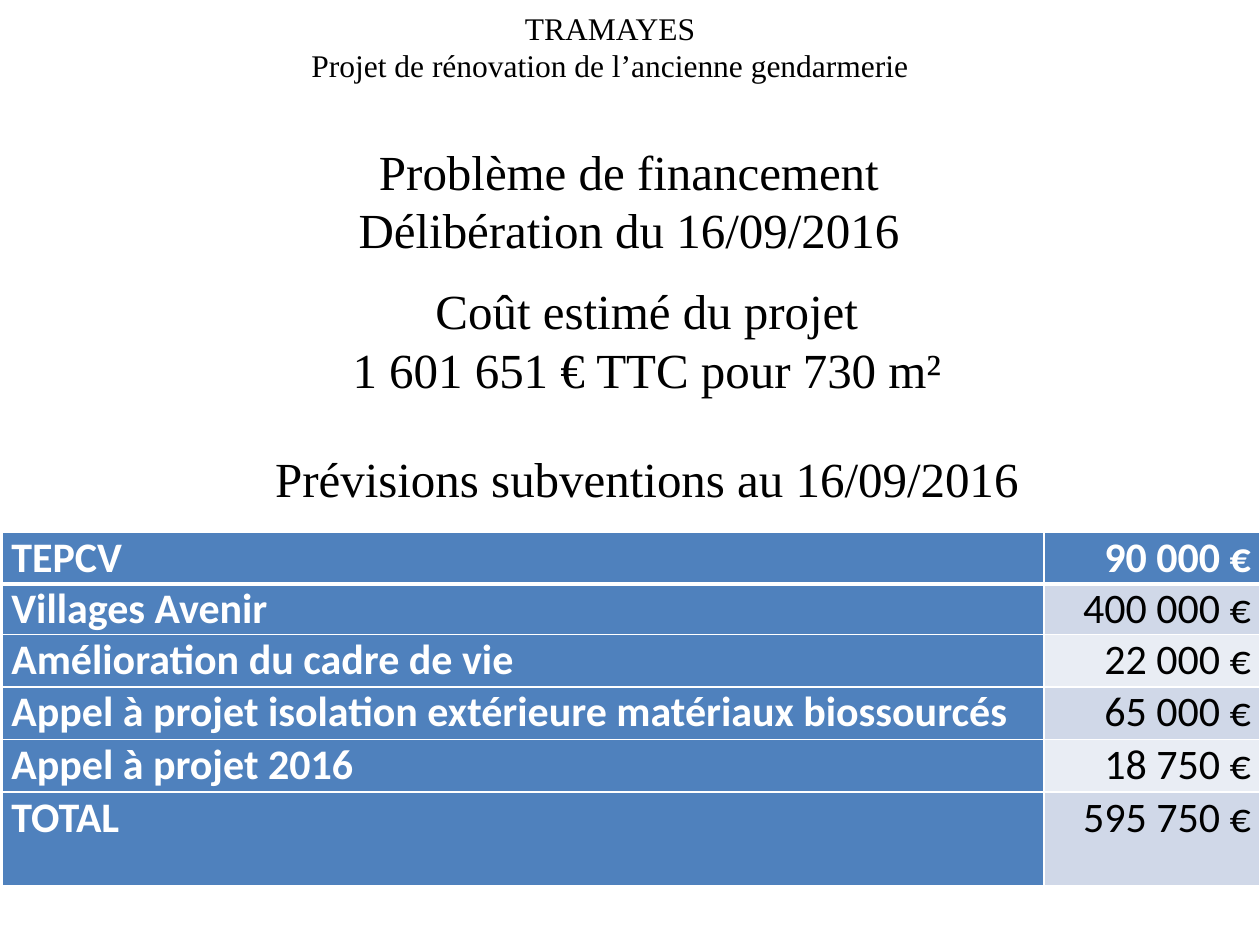
from dataclasses import dataclass

from lxml.etree import SubElement
from pptx import Presentation
from pptx.dml.color import RGBColor
from pptx.enum.text import MSO_AUTO_SIZE as AutoSize, PP_ALIGN as Align
from pptx.oxml.ns import qn
from pptx.util import Cm, Pt

BLACK = RGBColor(0x00, 0x00, 0x00)
WHITE = RGBColor(0xFF, 0xFF, 0xFF)
BLUE = RGBColor(0x4F, 0x81, 0xBD)
BANDS = (RGBColor(0xE9, 0xED, 0xF4), RGBColor(0xD0, 0xD8, 0xE8))

HEADING_WIDTH = 18.0
COLUMN_WIDTHS = (21.0, 4.35)
CELL_MARGINS = {"margin_left": Cm(0.18), "margin_right": Cm(0.18),
                "margin_top": Cm(0), "margin_bottom": Cm(0)}


@dataclass
class Heading:
    left: float
    top: float
    height: float
    size: int
    lines: tuple[str, ...]


@dataclass
class Subsidy:
    name: str
    amount: str
    height: float


HEADINGS = (
    Heading(3.3, 0.05, 1.8, 18,
            ("TRAMAYES", "Projet de rénovation de l’ancienne gendarmerie")),
    Heading(3.68, 2.72, 2.64, 28,
            ("Problème de financement", "Délibération du 16/09/2016")),
    Heading(4.04, 5.54, 2.64, 28,
            ("Coût estimé du projet", "1 601 651 € TTC pour 730 m²")),
    Heading(4.04, 8.92, 2.64, 28, ("Prévisions subventions au 16/09/2016",)),
)

SUBSIDIES = (
    Subsidy("TEPCV", "90 000 €", 1.04),
    Subsidy("Villages Avenir", "400 000 €", 1.02),
    Subsidy("Amélioration du cadre de vie", "22 000 €", 1.06),
    Subsidy("Appel à projet isolation extérieure matériaux biossourcés",
            "65 000 €", 1.06),
    Subsidy("Appel à projet 2016", "18 750 €", 1.06),
    Subsidy("TOTAL", "595 750 €", 1.88),
)


def set_all(target, values: dict) -> None:
    for name, value in values.items():
        setattr(target, name, value)


def write(para, text: str, align, color: RGBColor, font: dict) -> None:
    para.alignment = align
    span = para.add_run()
    span.text = text
    set_all(span.font, font)
    span.font.color.rgb = color


def add_heading(page, heading: Heading) -> None:
    box = page.shapes.add_textbox(Cm(heading.left), Cm(heading.top),
                                  Cm(HEADING_WIDTH), Cm(heading.height))
    frame = box.text_frame
    set_all(frame, {"word_wrap": True, "auto_size": AutoSize.SHAPE_TO_FIT_TEXT})
    font = {"name": "Times New Roman", "size": Pt(heading.size)}
    for index, line in enumerate(heading.lines):
        para = frame.add_paragraph() if index else frame.paragraphs[0]
        write(para, line, Align.CENTER, BLACK, font)


def add_border(cell, side: str, points: int) -> None:
    line = SubElement(cell._tc.get_or_add_tcPr(), qn(f"a:{side}"), w=str(Pt(points)))
    fill = SubElement(line, qn("a:solidFill"))
    SubElement(fill, qn("a:srgbClr"), val=str(WHITE))


def fill_cell(cell, text: str, row: int, column: int) -> None:
    strong = row == 0 or column == 0
    set_all(cell, CELL_MARGINS)
    # Borders come before the fill; the rule under the first row is thicker
    borders = {"lnL": 1, "lnR": 1, "lnT": 3 if row == 1 else 1,
               "lnB": 3 if row == 0 else 1}
    for side, points in borders.items():
        add_border(cell, side, points)
    cell.fill.solid()
    cell.fill.fore_color.rgb = BLUE if strong else BANDS[row % 2]
    write(cell.text_frame.paragraphs[0], text,
          Align.RIGHT if column else Align.JUSTIFY,
          WHITE if strong else BLACK,
          {"name": "Calibri", "size": Pt(24), "bold": strong})


def add_subsidies(page, subsidies: tuple[Subsidy, ...]) -> None:
    height = sum(subsidy.height for subsidy in subsidies)
    table = page.shapes.add_table(len(subsidies), len(COLUMN_WIDTHS), Cm(0.05),
                                  Cm(10.73), Cm(sum(COLUMN_WIDTHS)), Cm(height)).table
    for column, width in zip(table.columns, COLUMN_WIDTHS):
        column.width = Cm(width)
    for row, subsidy in enumerate(subsidies):
        table.rows[row].height = Cm(subsidy.height)
        for column, text in enumerate((subsidy.name, subsidy.amount)):
            fill_cell(table.cell(row, column), text, row, column)


def main() -> None:
    deck = Presentation()
    set_all(deck, {"slide_width": Cm(25.4), "slide_height": Cm(19.05)})
    page = deck.slides.add_slide(deck.slide_layouts[6])

    # Title, decision and cost
    for heading in HEADINGS:
        add_heading(page, heading)

    # Expected subsidies
    add_subsidies(page, SUBSIDIES)

    deck.save("out.pptx")


if __name__ == "__main__":
    main()
